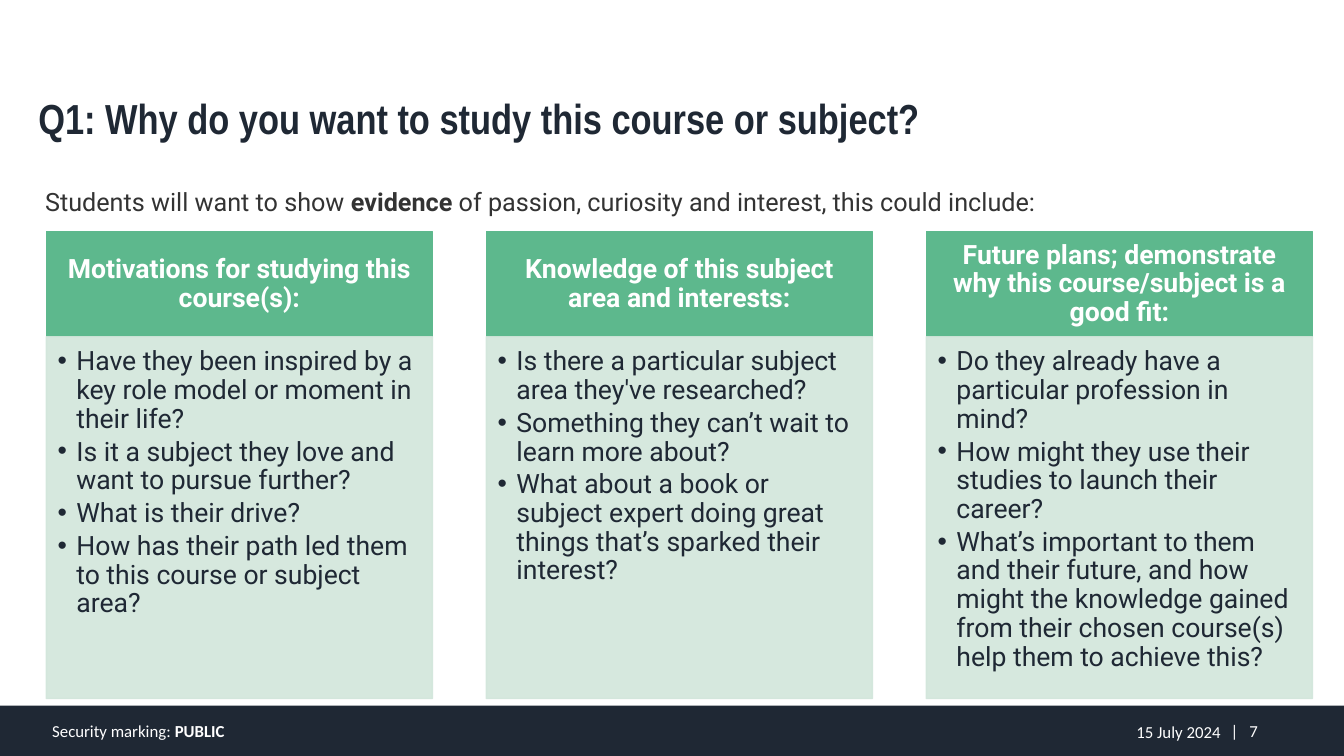
from lxml.etree import SubElement
from pptx import Presentation
from pptx.dml.color import RGBColor
from pptx.enum.shapes import MSO_SHAPE
from pptx.enum.text import MSO_ANCHOR, PP_ALIGN
from pptx.oxml.ns import qn
from pptx.util import Pt

COLORS = {
    "navy": "1F2834",
    "green": "5DB88D",
    "mint": "D2E6DB",
    "grey": "333333",
    "white": "FFFFFF",
}
COLUMNS = [
    ("Motivations for studying this course(s):", [
        "Have they been inspired by a key role model or moment in their life?",
        "Is it a subject they love and want to pursue further?",
        "What is their drive?",
        "How has their path led them to this course or subject area?",
    ]),
    ("Knowledge of this subject area and interests:", [
        "Is there a particular subject area they've researched?",
        "Something they can’t wait to learn more about?",
        "What about a book or subject expert doing great things that’s sparked their interest?",
    ]),
    ("Future plans; demonstrate why this course/subject is a good fit:", [
        "Do they already have a particular profession in mind?",
        "How might they use their studies to launch their career?",
        "What’s important to them and their future, and how might the knowledge gained "
        "from their chosen course(s) help them to achieve this?",
    ]),
]
COLUMN_LEFT, COLUMN_STEP, COLUMN_WIDTH = 33.12, 314.3, 275.76
HEADER_TOP, HEADER_HEIGHT, BODY_HEIGHT = 165.6, 74.88, 258.5

deck = Presentation()
deck.slide_width, deck.slide_height = Pt(960), Pt(540)
page = deck.slides.add_slide(deck.slide_layouts[5])


def style(para, font_name, size, color, bold=None, align=PP_ALIGN.LEFT):
    para.alignment = align
    para.font.name = font_name
    para.font.size = Pt(size)
    para.font.bold = bold
    para.font.color.rgb = RGBColor.from_string(COLORS[color])


def add_panel(left, top, width, height, color):
    panel = page.shapes.add_shape(
        MSO_SHAPE.RECTANGLE, Pt(left), Pt(top), Pt(width), Pt(height))
    panel.shadow.inherit = False
    panel.fill.solid()
    panel.fill.fore_color.rgb = RGBColor.from_string(COLORS[color])
    panel.line.color.rgb = RGBColor.from_string(COLORS[color])
    panel.line.width = Pt(1)
    return panel


title = page.shapes.title
title.left, title.top, title.width, title.height = Pt(20.16), Pt(62.64), Pt(686.9), Pt(43.9)
title.text_frame.text = "Q1: Why do you want to study this course or subject?"
title.text_frame.word_wrap = True
title.text_frame.vertical_anchor = MSO_ANCHOR.TOP
style(title.text_frame.paragraphs[0], "Arial Narrow", 30, "navy", True)

footer_bar = add_panel(0, 504, 960, 36, "navy")
footer_bar.line.fill.background()

text_boxes = [
    (25.2, 129.6, 919.4, 28.8, MSO_ANCHOR.TOP, PP_ALIGN.LEFT, "Roboto", 18, "grey",
     [("Students will want to show ", None), ("evidence", True),
      (" of passion, curiosity and interest, this could include:", None)]),
    (30.24, 510.5, 501, 23.76, MSO_ANCHOR.MIDDLE, PP_ALIGN.LEFT, "Calibri", 12, "white",
     [("Security marking: ", None), ("PUBLIC", True)]),
    (626.4, 510.5, 245.5, 24.5, MSO_ANCHOR.MIDDLE, PP_ALIGN.RIGHT, "Calibri", 12, "white",
     [("15 July 2024", None)]),
    (871.9, 510.5, 57.6, 23.76, MSO_ANCHOR.MIDDLE, PP_ALIGN.LEFT, "Calibri", 12, "white",
     [("|\t7", None)]),
]
for left, top, width, height, anchor, align, font_name, size, color, spans in text_boxes:
    box = page.shapes.add_textbox(Pt(left), Pt(top), Pt(width), Pt(height))
    frame = box.text_frame
    frame.word_wrap = True
    frame.vertical_anchor = anchor
    if align == PP_ALIGN.RIGHT:
        frame.margin_right = 0
    para = frame.paragraphs[0]
    for words, bold in spans:
        span = para.add_run()
        span.text = words
        span.font.bold = bold
        if "\t" in words:
            tab_list = SubElement(para._p.get_or_add_pPr(), qn("a:tabLst"))
            SubElement(tab_list, qn("a:tab"), pos=str(Pt(13.5)), algn="l")
    style(para, font_name, size, color, align=align)

for index, (heading, questions) in enumerate(COLUMNS):
    left = COLUMN_LEFT + index * COLUMN_STEP
    header = add_panel(left, HEADER_TOP, COLUMN_WIDTH, HEADER_HEIGHT, "green")
    frame = header.text_frame
    frame.word_wrap = True
    frame.vertical_anchor = MSO_ANCHOR.MIDDLE
    frame.margin_left = frame.margin_right = Pt(10.6)
    frame.margin_top = frame.margin_bottom = Pt(6)
    frame.text = heading
    frame.paragraphs[0].line_spacing = 0.9
    style(frame.paragraphs[0], "Roboto", 19, "white", True, PP_ALIGN.CENTER)

    body = add_panel(left, HEADER_TOP + HEADER_HEIGHT, COLUMN_WIDTH, BODY_HEIGHT, "mint")
    for color_element in body._element.spPr.iter(qn("a:srgbClr")):
        SubElement(color_element, qn("a:alpha"), val="90000")
    frame = body.text_frame
    frame.word_wrap = True
    frame.vertical_anchor = MSO_ANCHOR.TOP
    frame.margin_left = frame.margin_top = Pt(8)
    frame.margin_right, frame.margin_bottom = Pt(10.6), Pt(12)
    frame.text = "\n".join(questions)
    for para in frame.paragraphs:
        para.level = 1
        para.line_spacing = 0.9
        para.space_after = Pt(2.85)
        properties = para._p.get_or_add_pPr()
        properties.set("marL", str(Pt(13.5)))
        properties.set("indent", str(Pt(-13.5)))
        SubElement(properties, qn("a:buFont"), typeface="Arial")
        SubElement(properties, qn("a:buChar"), char="•")
        style(para, "Roboto", 19, "navy")

deck.save("out.pptx")
